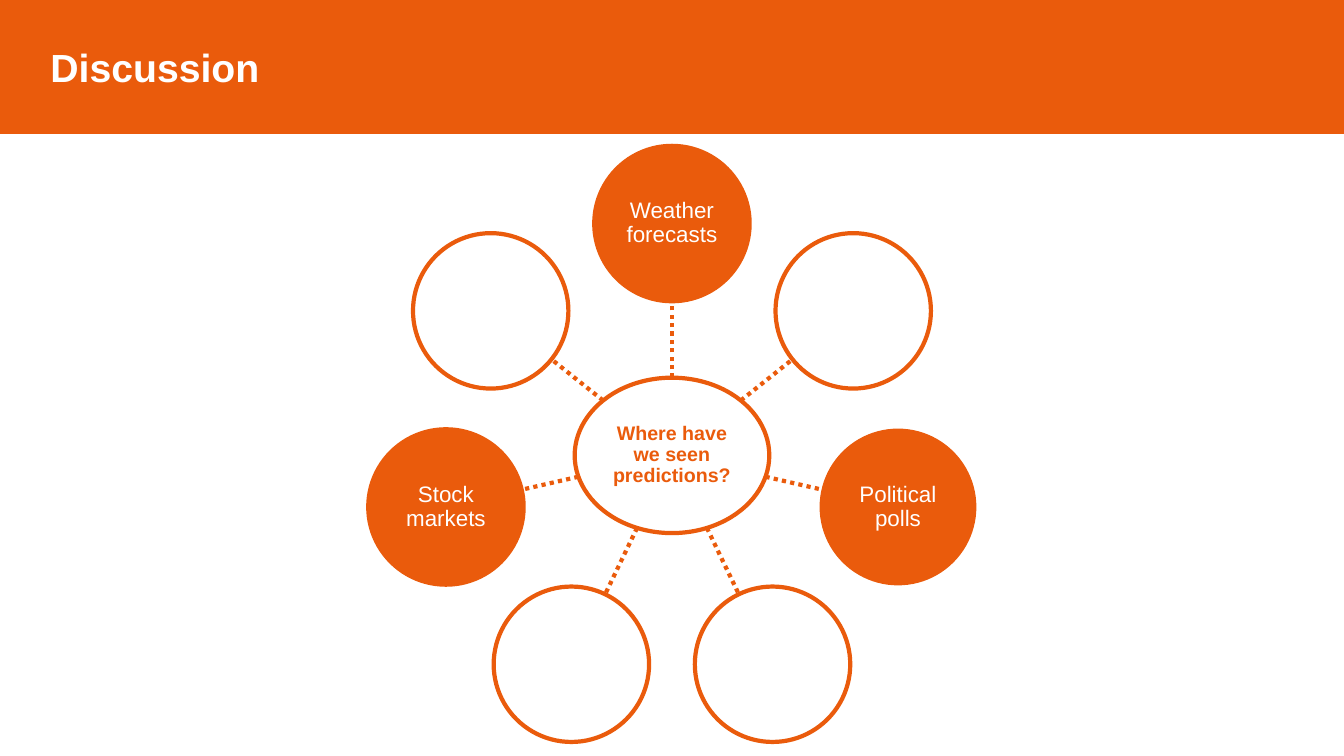
from math import cos, hypot, pi, sin

from lxml import etree
from pptx import Presentation
from pptx.dml.color import RGBColor
from pptx.enum.dml import MSO_LINE
from pptx.enum.shapes import MSO_CONNECTOR, MSO_SHAPE
from pptx.enum.text import MSO_ANCHOR, MSO_AUTO_SIZE, PP_ALIGN
from pptx.oxml.ns import qn
from pptx.util import Pt

DOTTED = MSO_LINE.ROUND_DOT
STRAIGHT = MSO_CONNECTOR.STRAIGHT
ELLIPSE = MSO_SHAPE.OVAL
MIDDLE = MSO_ANCHOR.MIDDLE
NO_AUTOFIT = MSO_AUTO_SIZE.NONE
LEFT, CENTER = PP_ALIGN.LEFT, PP_ALIGN.CENTER

ORANGE, WHITE = "EA5B0C", "FFFFFF"
FONT = "Arial"
TITLE_ONLY = 5

SLIDE_WIDTH, SLIDE_HEIGHT = 960, 540
BAND_HEIGHT = 95
HUB_WIDTH, HUB_HEIGHT = 139, 111
IDEA_SIZE = 111

QUESTION = "Where have we seen predictions?"
# Clockwise from the top: idea and outline width; an empty idea is left to the audience.
IDEAS = [
    ("Weather forecasts", 3),
    ("", 3),
    ("Political polls", 1),
    ("", 3),
    ("", 3),
    ("Stock markets", 3),
    ("", 3),
]


def rgb(hex_color):
    return RGBColor.from_string(hex_color)


def paint(shape, fill, line_width):
    shape.fill.solid()
    shape.fill.fore_color.rgb = rgb(fill)
    shape.line.color.rgb = rgb(ORANGE)
    shape.line.width = Pt(line_width)


def write(shape, words, size, color, bold, align):
    frame = shape.text_frame
    frame.text = words
    frame.word_wrap = True
    frame.auto_size = NO_AUTOFIT
    frame.vertical_anchor = MIDDLE
    paragraph = frame.paragraphs[0]
    paragraph.alignment = align
    font = paragraph.runs[0].font
    font.name, font.size, font.bold = FONT, Pt(size), bold
    font.color.rgb = rgb(color)


def add_title_band(slide, left, top, width, height):
    band = slide.shapes.title
    band.left, band.top, band.width, band.height = map(Pt, (left, top, width, height))
    paint(band, ORANGE, 1)
    write(band, "Discussion", 28, WHITE, True, LEFT)
    band.text_frame.margin_left = Pt(36)


def add_bubble(slide, center_x, center_y, width, height, fill, line_width):
    bubble = slide.shapes.add_shape(
        ELLIPSE, Pt(center_x - width / 2), Pt(center_y - height / 2), Pt(width), Pt(height))
    bubble.shadow.inherit = False
    paint(bubble, fill, line_width)
    frame = bubble.text_frame
    frame.margin_left = frame.margin_right = Pt(0.75)
    frame.margin_top = frame.margin_bottom = Pt(0.75)
    return bubble


def label(bubble, words, size, color, bold):
    write(bubble, words, size, color, bold, CENTER)
    bubble.text_frame.paragraphs[0].line_spacing = 0.9


def add_spoke(slide, *ends):
    spoke = slide.shapes.add_connector(STRAIGHT, *map(Pt, ends))
    spoke.line.color.rgb = rgb(ORANGE)
    spoke.line.width = Pt(3)
    spoke.line.dash_style = DOTTED
    etree.SubElement(spoke._element.spPr, qn("a:effectLst"))


def add_idea_wheel(slide, left, top, width, radius):
    """Place the question as a hub with the ideas evenly spaced on a ring."""
    hub_x, hub_y = left + width / 2, top + IDEA_SIZE / 2 + radius
    hub = add_bubble(slide, hub_x, hub_y, HUB_WIDTH, HUB_HEIGHT, WHITE, 3)
    label(hub, QUESTION, 14, ORANGE, True)

    for index, (idea, line_width) in enumerate(IDEAS):
        angle = 2 * pi * index / len(IDEAS)
        across, down = sin(angle), -cos(angle)
        # Distance from the hub's centre to its elliptical edge along this angle.
        start = 1 / hypot(across / (HUB_WIDTH / 2), down / (HUB_HEIGHT / 2))
        end = radius - IDEA_SIZE / 2
        add_spoke(slide, hub_x + start * across, hub_y + start * down,
                  hub_x + end * across, hub_y + end * down)
        bubble = add_bubble(slide, hub_x + radius * across, hub_y + radius * down,
                            IDEA_SIZE, IDEA_SIZE, ORANGE if idea else WHITE, line_width)
        if idea:
            label(bubble, idea, 16, WHITE, False)


def main():
    deck = Presentation()
    deck.slide_width, deck.slide_height = Pt(SLIDE_WIDTH), Pt(SLIDE_HEIGHT)
    slide = deck.slides.add_slide(deck.slide_layouts[TITLE_ONLY])
    add_title_band(slide, 0, 0, SLIDE_WIDTH, BAND_HEIGHT)
    add_idea_wheel(slide, 0, BAND_HEIGHT + 9.2, SLIDE_WIDTH, 165.6)
    deck.save("out.pptx")


if __name__ == "__main__":
    main()
